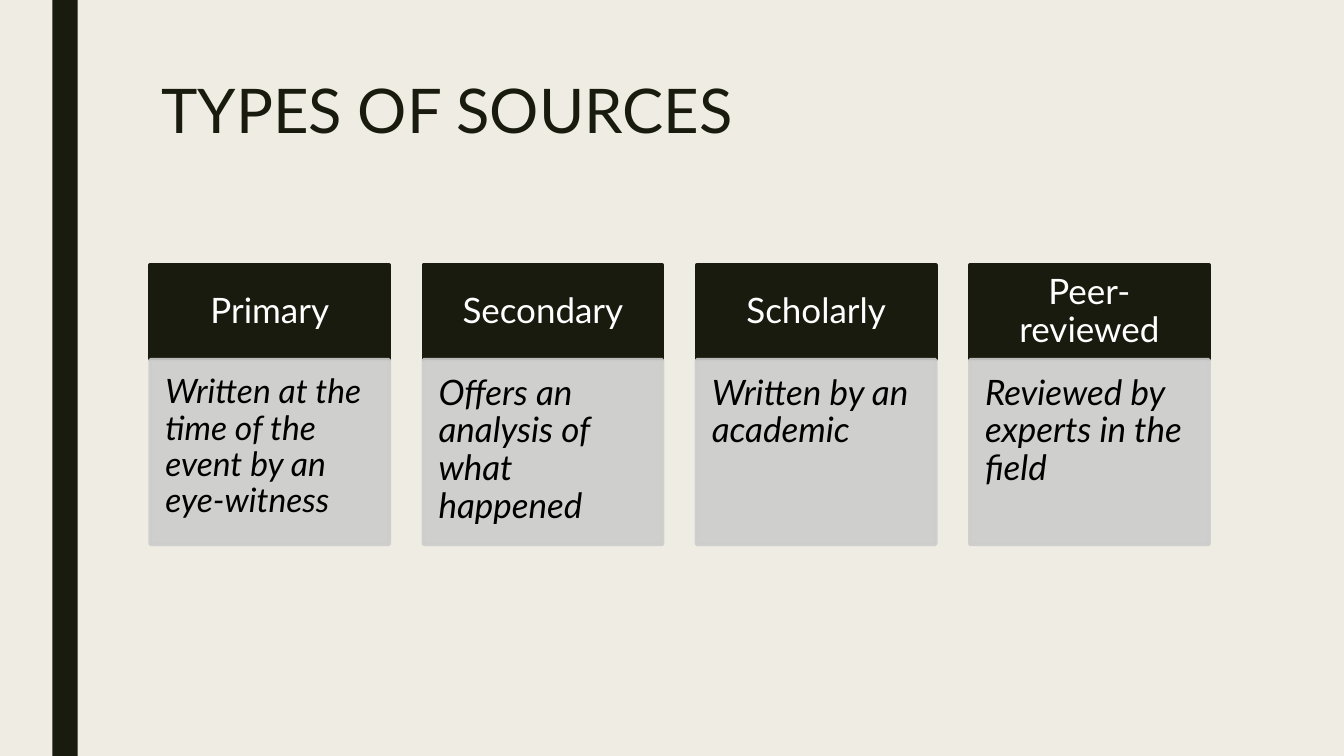
from lxml.etree import SubElement
from pptx import Presentation
from pptx.dml.color import RGBColor
from pptx.enum.shapes import MSO_SHAPE
from pptx.enum.text import MSO_ANCHOR, PP_ALIGN
from pptx.oxml.ns import qn
from pptx.util import Inches, Pt

DARK, PALE, GREY = "191B0E", "EFEDE3", "CCCDCC"
WHITE, BLACK = "FFFFFF", "000000"

# heading, description, description size
SOURCES = [
    ("Primary", "Written at the time of the event by an eye-witness", 24),
    ("Secondary", "Offers an analysis of what happened", 25),
    ("Scholarly", "Written by an academic", 25),
    ("Peer-reviewed", "Reviewed by experts in the field", 25),
]
LEFT, STEP, WIDTH = 1.49, 2.71, 2.37


def paint(target, color):
    target.rgb = RGBColor.from_string(color)


def fade(shape, percent):
    """Make the fill and line of a shape partly transparent."""
    for color in shape._element.spPr.iter(qn("a:srgbClr")):
        SubElement(color, qn("a:alpha"), val=str(percent * 1000))


class Deck:
    """Holds the font and the current slide."""

    def __init__(self, font):
        self.font = font
        self.file = Presentation()
        self.file.slide_width = Inches(13.33)
        self.file.slide_height = Inches(7.5)
        self.slide = self.file.slides.add_slide(self.file.slide_layouts[5])
        fill = self.slide.background.fill
        fill.solid()
        paint(fill.fore_color, PALE)

    def label(self, shape, text, size, color, align=PP_ALIGN.LEFT,
              anchor=MSO_ANCHOR.TOP, inset=(0.1, 0.05, 0.1, 0.05),
              italic=False):
        frame = shape.text_frame
        frame.text = text
        frame.word_wrap = True
        frame.vertical_anchor = anchor
        (frame.margin_left, frame.margin_top,
         frame.margin_right, frame.margin_bottom) = map(Inches, inset)
        line = frame.paragraphs[0]
        line.alignment = align
        line.line_spacing = 0.9
        line.font.name = self.font
        line.font.size = Pt(size)
        line.font.italic = italic
        paint(line.font.color, color)

    def title(self, text):
        shape = self.slide.shapes.title
        shape.left, shape.top = Inches(1.5), Inches(0.75)
        shape.width, shape.height = Inches(10.5), Inches(1.62)
        self.label(shape, text, 44, DARK)

    def box(self, left, top, width, height, color, edge=0):
        shape = self.slide.shapes.add_shape(
            MSO_SHAPE.RECTANGLE, *map(Inches, (left, top, width, height)))
        shape.shadow.inherit = False
        shape.fill.solid()
        paint(shape.fill.fore_color, color)
        if edge:
            shape.line.width = Pt(edge)
            paint(shape.line.color, color)
        else:
            shape.line.fill.background()
        return shape

    def card(self, left, head, text, size):
        top = self.box(left, 2.63, WIDTH, 0.93, DARK, 2.75)
        self.label(top, head, 25, WHITE, PP_ALIGN.CENTER, MSO_ANCHOR.MIDDLE,
                   (0.19, 0.11, 0.19, 0.11))
        body = self.box(left, 3.57, WIDTH, 1.83, GREY, 2.75)
        fade(body, 90)
        self.label(body, text, size, BLACK, inset=(0.15, 0.15, 0.19, 0.22),
                   italic=True)


def main():
    deck = Deck("Lato")
    deck.box(0.52, 0, 0.25, 7.5, DARK)
    deck.title("TYPES OF SOURCES")
    for i, source in enumerate(SOURCES):
        deck.card(LEFT + i * STEP, *source)
    deck.file.save("out.pptx")


if __name__ == "__main__":
    main()
